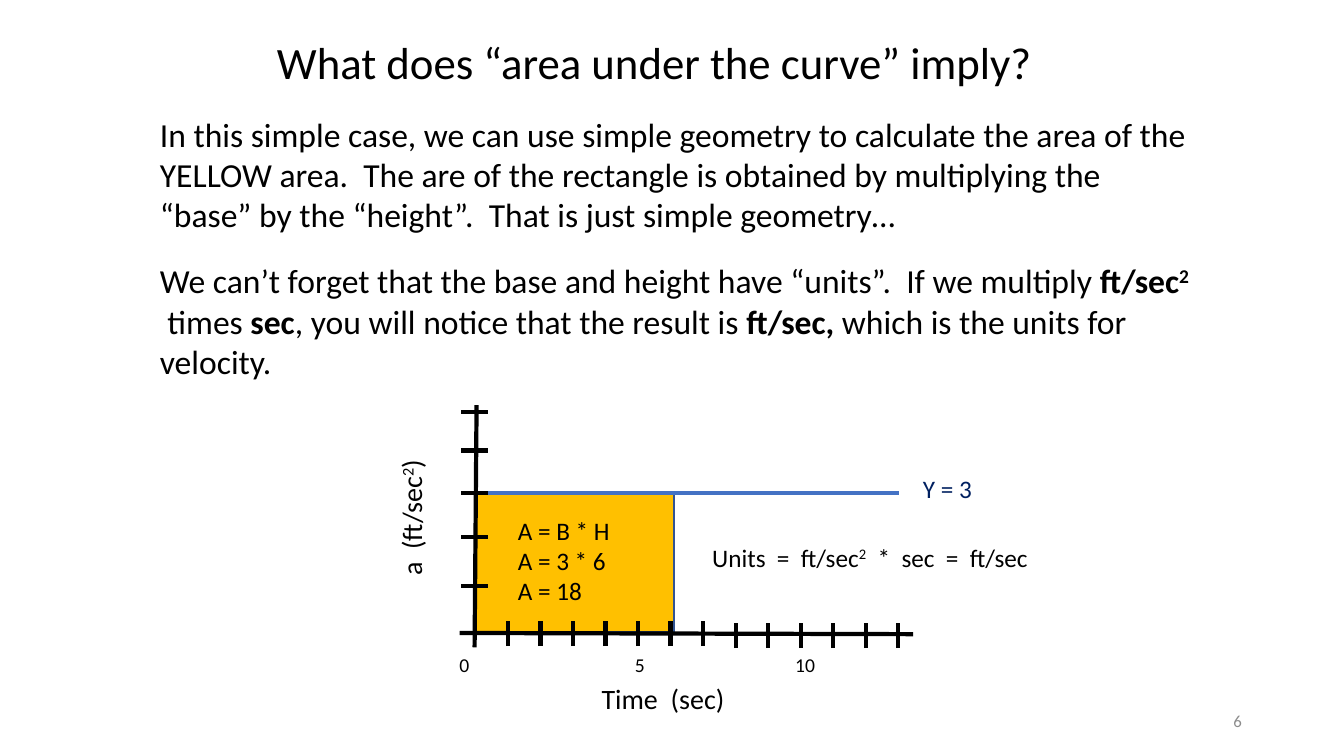
from dataclasses import dataclass

from lxml import etree
from pptx import Presentation
from pptx.dml.color import RGBColor
from pptx.enum.shapes import MSO_CONNECTOR, MSO_SHAPE
from pptx.enum.text import MSO_ANCHOR, PP_ALIGN
from pptx.oxml.ns import qn
from pptx.util import Cm, Pt

STRAIGHT = MSO_CONNECTOR.STRAIGHT
RECTANGLE = MSO_SHAPE.RECTANGLE
TOP, MIDDLE = MSO_ANCHOR.TOP, MSO_ANCHOR.MIDDLE
LEFT, RIGHT = PP_ALIGN.LEFT, PP_ALIGN.RIGHT


@dataclass(frozen=True)
class Theme:
    font: str = "Calibri"
    ink: str = "000000"
    curve: str = "4472C4"
    curve_label: str = "002060"
    area: str = "FFC000"
    area_edge: str = "325491"
    muted: str = "8C8C8C"
    title: int = 32
    body: int = 24
    axis_title: int = 20
    label: int = 18
    scale: int = 14
    page_number: int = 12
    stroke: int = 3


THEME = Theme()


@dataclass(frozen=True)
class Span:
    text: str
    bold: bool = False
    raised: bool = False


def add_text(page, place, paragraphs, size, color=THEME.ink, align=LEFT, anchor=TOP):
    """Each paragraph is a list of spans."""
    box = page.shapes.add_textbox(*map(Cm, place))
    frame = box.text_frame
    frame.word_wrap = True
    frame.vertical_anchor = anchor
    for index, spans in enumerate(paragraphs):
        para = frame.add_paragraph() if index else frame.paragraphs[0]
        para.alignment = align
        para.font.name = THEME.font
        para.font.size = Pt(size)
        para.font.color.rgb = RGBColor.from_string(color)
        for span in spans:
            run = para.add_run()
            run.text = span.text
            if span.bold:
                run.font.bold = True
            if span.raised:
                run.font._element.set("baseline", "30000")
    return box


def add_line(page, start, end, color=THEME.ink):
    line = page.shapes.add_connector(STRAIGHT, *map(Cm, (*start, *end)))
    line.line.color.rgb = RGBColor.from_string(color)
    line.line.width = Pt(THEME.stroke)
    etree.SubElement(line._element.spPr, qn("a:effectLst"))


def add_area(page, place):
    area = page.shapes.add_shape(RECTANGLE, *map(Cm, place))
    area.shadow.inherit = False
    area.fill.solid()
    area.fill.fore_color.rgb = RGBColor.from_string(THEME.area)
    area.line.color.rgb = RGBColor.from_string(THEME.area_edge)
    area.line.width = Pt(1)


def add_explanation(page):
    add_text(page, (6.73, 0.76, 21.39, 1.63),
             [[Span("What does “area under the curve” imply?")]], THEME.title)
    add_text(page, (3.78, 2.74, 26.57, 3.33), [[Span(
        "In this simple case, we can use simple geometry to calculate the area of "
        "the YELLOW area.  The are of the rectangle is obtained by multiplying the "
        "“base” by the “height”.  That is just simple geometry…")]], THEME.body)
    add_text(page, (3.78, 6.43, 26.57, 3.33), [[
        Span("We can’t forget that the base and height have “units”.  If we multiply "),
        Span("ft/sec", bold=True),
        Span("2", bold=True, raised=True),
        Span("  times "),
        Span("sec", bold=True),
        Span(", you will notice that the result is "),
        Span("ft/sec, ", bold=True),
        Span("which is the units for velocity."),
    ]], THEME.body)


def add_graph(page):
    # Area and curve
    add_area(page, (11.96, 12.42, 5.03, 3.51))
    add_line(page, (12.01, 12.42), (22.66, 12.42), THEME.curve)

    # Axes
    add_line(page, (11.58, 15.95), (23.01, 15.98))
    add_line(page, (12.01, 10.21), (11.96, 16.31))

    # Ticks; the right half of the time axis sits slightly lower
    for tick_y in (10.39, 11.35, 12.42, 13.54, 14.76):
        add_line(page, (12.29, tick_y), (11.61, tick_y))
    for second in range(13):
        tick_x = 12.8 + 0.82 * second
        top = 15.65 if second < 7 else 15.7
        add_line(page, (tick_x, top + 0.63), (tick_x, top))

    # Scale and axis titles
    for value, left in (("0", 11.33), ("5", 15.75), ("10", 19.79)):
        add_text(page, (left, 16.33, 1.68, 0.86), [[Span(value)]], THEME.scale)
    add_text(page, (14.91, 17.04, 4.5, 1.12), [[Span("Time  (sec)")]], THEME.axis_title)
    acceleration = add_text(
        page, (7.57, 11.4, 5.59, 1.12),
        [[Span("a  (ft/sec"), Span("2", raised=True), Span(")")]], THEME.axis_title)
    acceleration.rotation = 270


def add_calculation(page):
    add_text(page, (23.01, 11.81, 2.11, 1.02), [[Span("Y = 3")]],
             THEME.label, THEME.curve_label)
    add_text(page, (12.8, 12.85, 3.63, 2.57),
             [[Span(step)] for step in ("A = B * H", "A = 3 * 6", "A = 18")], THEME.label)
    add_text(page, (17.7, 13.54, 10.41, 1.02), [[
        Span("Units  =  ft/sec"), Span("2", raised=True), Span("  *  sec  =  ft/sec"),
    ]], THEME.label)


def main():
    deck = Presentation()
    deck.slide_width, deck.slide_height = Cm(33.87), Cm(19.05)
    page = deck.slides.add_slide(deck.slide_layouts[6])
    add_explanation(page)
    add_graph(page)
    add_calculation(page)
    add_text(page, (23.93, 17.65, 7.62, 1.02), [[Span("6")]],
             THEME.page_number, THEME.muted, RIGHT, MIDDLE)
    deck.save("out.pptx")


if __name__ == "__main__":
    main()
